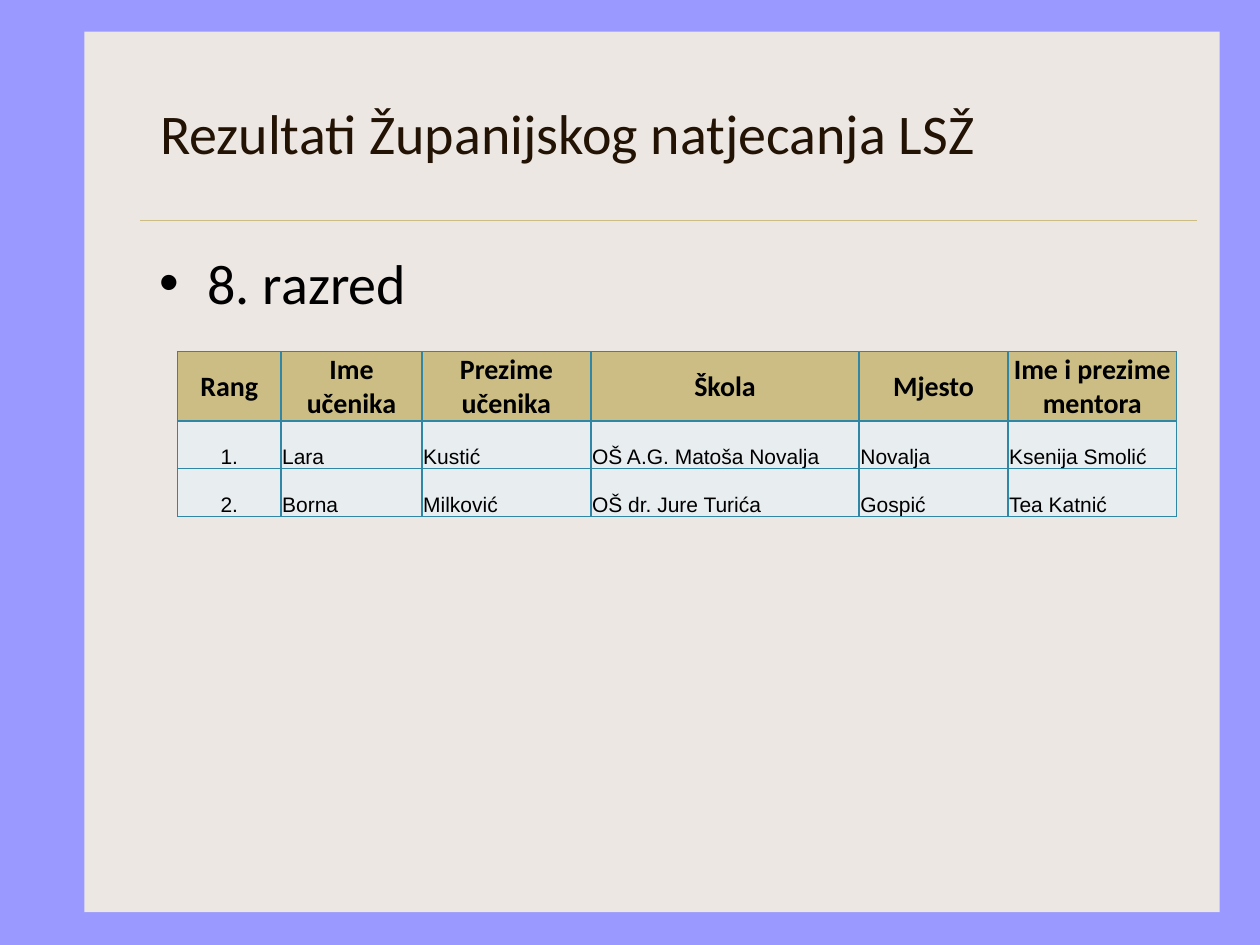
"""Builds the slide with the county competition results for grade 8."""
from lxml import etree
from pptx import Presentation
from pptx.dml.color import RGBColor
from pptx.enum.shapes import MSO_CONNECTOR, MSO_SHAPE
from pptx.enum.text import MSO_ANCHOR, MSO_AUTO_SIZE, PP_ALIGN
from pptx.oxml.ns import qn
from pptx.util import Inches, Pt

LEFT, CENTER = PP_ALIGN.LEFT, PP_ALIGN.CENTER
MIDDLE, BOTTOM = MSO_ANCHOR.MIDDLE, MSO_ANCHOR.BOTTOM
COLORS = {
    "background": "9999FF", "panel": "EDE7E3", "gold": "CBBD83", "title": "221304",
    "text": "000000", "row": "E8EDF0", "border": "3086A5",
}
COLUMN_WIDTHS = [0.82, 1.12, 1.34, 2.13, 1.18, 1.34]
ROW_HEIGHTS = [0.55, 0.38, 0.38]
RESULTS = [
    ["Rang", "Ime učenika", "Prezime učenika", "Škola", "Mjesto", "Ime i prezime mentora"],
    ["1.", "Lara", "Kustić", "OŠ A.G. Matoša Novalja", "Novalja", "Ksenija Smolić"],
    ["2.", "Borna", "Milković", "OŠ dr. Jure Turića", "Gospić", "Tea Katnić"],
]


def write_text(frame, text, size=32, font="Calibri", color="text", bold=False,
               align=LEFT, anchor=MIDDLE, bullet=None):
    frame.word_wrap = True
    frame.vertical_anchor = anchor
    para = frame.paragraphs[0]
    para.alignment = align
    if bullet:
        properties = para._p.get_or_add_pPr()
        properties.set("marL", str(Inches(0.38)))
        properties.set("indent", str(-Inches(0.38)))
        etree.SubElement(properties, qn("a:buFont"), typeface="Arial")
        etree.SubElement(properties, qn("a:buChar"), char=bullet)
    span = para.add_run()
    span.text = text
    span.font.size = Pt(size)
    span.font.name = font
    span.font.bold = bold
    span.font.color.rgb = RGBColor.from_string(COLORS[color])


def add_borders(cell):
    properties = cell._tc.get_or_add_tcPr()
    for side in ("lnL", "lnR", "lnT", "lnB"):
        border = etree.SubElement(properties, qn(f"a:{side}"), w=str(Pt(1)))
        fill = etree.SubElement(border, qn("a:solidFill"))
        etree.SubElement(fill, qn("a:srgbClr"), val=COLORS["border"])


deck = Presentation()
deck.slide_width, deck.slide_height = Inches(10), Inches(7.5)
page = deck.slides.add_slide(deck.slide_layouts[5])
page.background.fill.solid()
page.background.fill.fore_color.rgb = RGBColor.from_string(COLORS["background"])

panel = page.shapes.add_shape(
    MSO_SHAPE.RECTANGLE, Inches(0.67), Inches(0.25), Inches(9.01), Inches(6.99))
panel.shadow.inherit = False
panel.fill.solid()
panel.fill.fore_color.rgb = RGBColor.from_string(COLORS["panel"])
panel.line.fill.background()
page.shapes._spTree.insert(2, panel._element)

divider = page.shapes.add_connector(
    MSO_CONNECTOR.STRAIGHT, Inches(1.11), Inches(1.75), Inches(9.5), Inches(1.75))
divider.line.color.rgb = RGBColor.from_string(COLORS["gold"])
divider.line.width = Pt(0.25)
etree.SubElement(divider._element.spPr, qn("a:effectLst"))

title = page.shapes.title
title.left, title.top = Inches(1.17), Inches(0.42)
title.width, title.height = Inches(8.33), Inches(1.25)
title.text_frame.auto_size = MSO_AUTO_SIZE.NONE
write_text(title.text_frame, "Rezultati Županijskog natjecanja LSŽ", color="title")

grade = page.shapes.add_textbox(Inches(1.17), Inches(1.92), Inches(8.33), Inches(4.5))
write_text(grade.text_frame, "8. razred", anchor=MSO_ANCHOR.TOP, bullet="•")

table = page.shapes.add_table(
    len(RESULTS), len(COLUMN_WIDTHS), Inches(1.41), Inches(2.79),
    Inches(sum(COLUMN_WIDTHS)), Inches(sum(ROW_HEIGHTS))).table
for column, width in zip(table.columns, COLUMN_WIDTHS):
    column.width = Inches(width)
for row, height in zip(table.rows, ROW_HEIGHTS):
    row.height = Inches(height)

for row_index, values in enumerate(RESULTS):
    header = row_index == 0
    for column_index, value in enumerate(values):
        cell = table.cell(row_index, column_index)
        cell.margin_left = cell.margin_right = cell.margin_top = Inches(0.01)
        cell.margin_bottom = 0
        add_borders(cell)
        cell.fill.solid()
        cell.fill.fore_color.rgb = RGBColor.from_string(COLORS["gold" if header else "row"])
        write_text(cell.text_frame, value, size=16 if header else 12,
                   font="Calibri" if header else "Arial", bold=header,
                   align=CENTER if header or column_index == 0 else LEFT)
        cell.vertical_anchor = MIDDLE if header else BOTTOM

deck.save("out.pptx")
